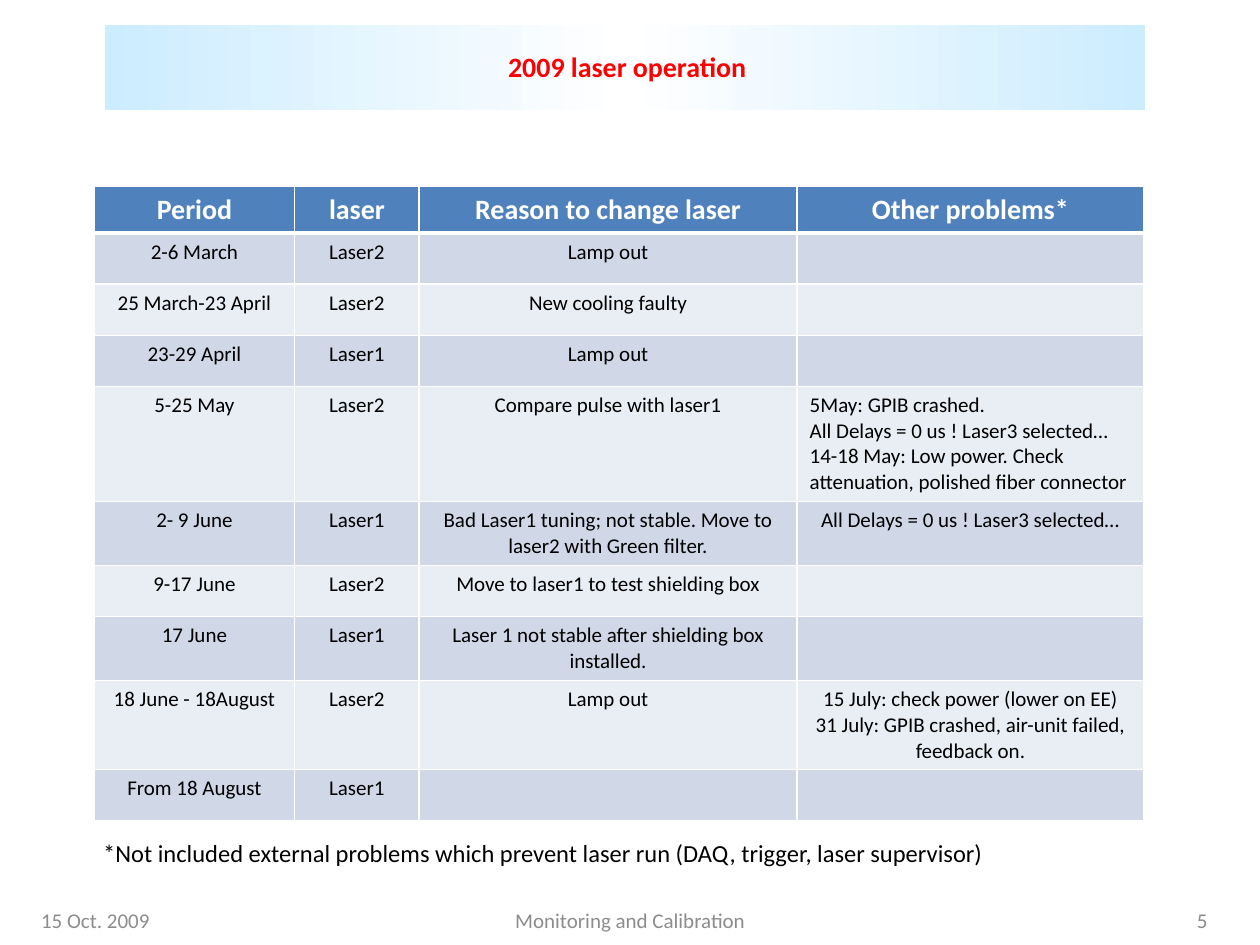
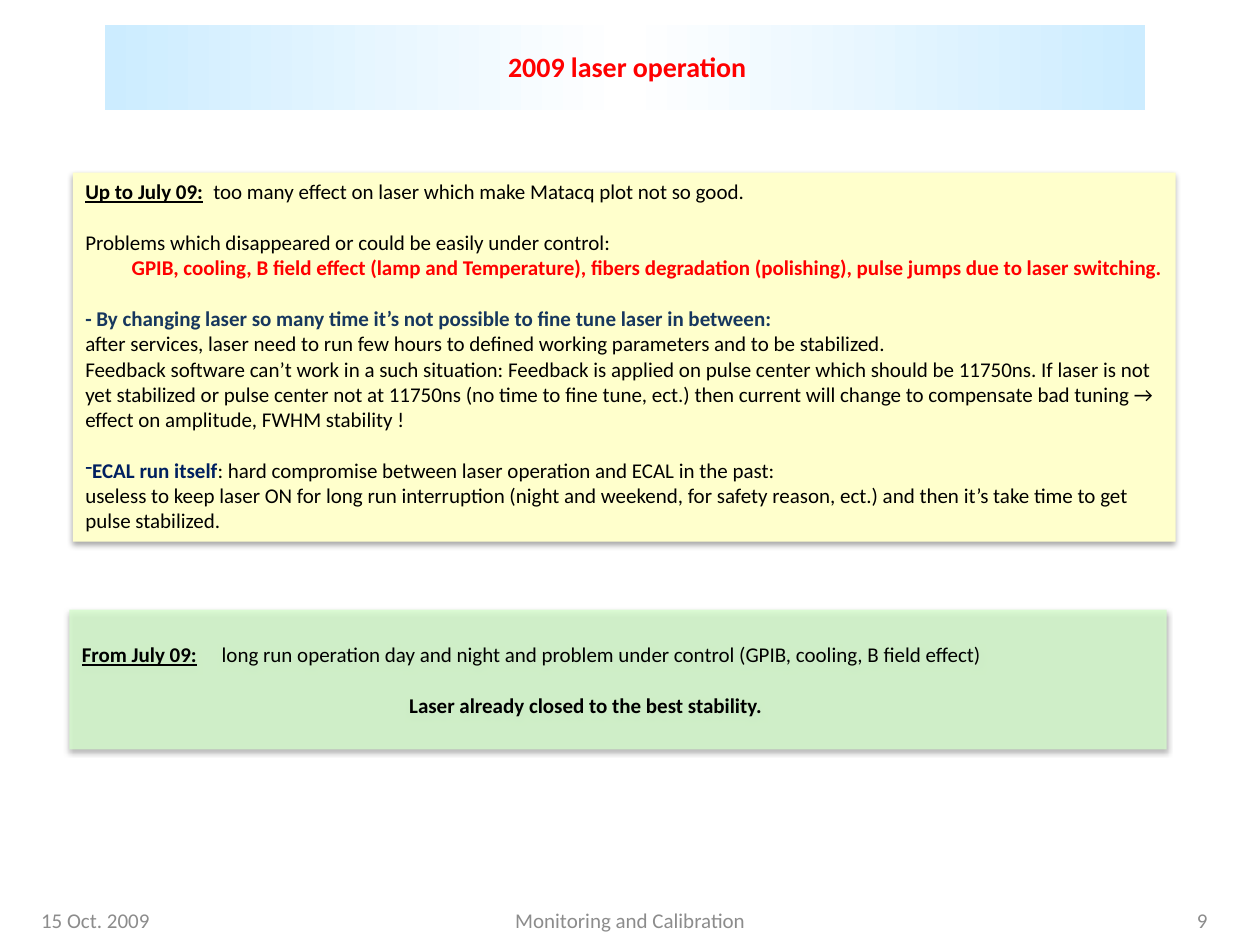
from copy import deepcopy
from dataclasses import dataclass, field
from typing import Any, Optional

from pptx import Presentation
from pptx.dml.color import RGBColor
from pptx.enum.shapes import MSO_SHAPE
from pptx.enum.text import MSO_ANCHOR, PP_ALIGN
from pptx.oxml import parse_xml
from pptx.oxml.ns import nsdecls, qn
from pptx.util import Cm, Pt


@dataclass(frozen=True)
class Theme:
    font: str = "Calibri"
    title_size: int = 16
    note_size: int = 14
    body_size: int = 12
    blank_line: float = 14.65
    black: str = "000000"
    white: str = "FFFFFF"
    red: str = "FF0000"
    grey: str = "8C8C8C"
    navy: str = "17375E"
    ink: str = "002060"
    band: str = "CCECFF"
    header: str = "4F81BD"
    stripes: tuple[str, str] = ("D0D8E8", "E9EDF4")
    yellow: str = "FFFFCC"
    green: str = "D5FCCC"


T = Theme()


@dataclass(frozen=True)
class Box:
    left: float
    top: float
    width: float
    height: float

    def emu(self) -> tuple:
        return Cm(self.left), Cm(self.top), Cm(self.width), Cm(self.height)


@dataclass(frozen=True)
class Run:
    text: str
    color: str = T.black
    size: int = T.body_size
    formats: dict = field(default_factory=dict)


@dataclass(frozen=True)
class Para:
    runs: tuple[Run, ...]
    align: PP_ALIGN = PP_ALIGN.LEFT
    gap: bool = False
    tab: float = 0
    indent: float = 0
    bullet: str = ""


@dataclass(frozen=True)
class Panel:
    box: Box
    fill: str
    paras: tuple[Para, ...]
    opacity: int = 100
    anchor: MSO_ANCHOR = MSO_ANCHOR.TOP


BOLD = {"bold": True}
LEAD = {"bold": True, "underline": True}

BAND = Box(2.12, 0.51, 20.96, 1.7)
TITLE = Box(6.78, 0.71, 11.86, 1.27)
NOTE = Box(1.83, 16.76, 18.42, 0.86)
FOOTER_TOP, FOOTER_HEIGHT = 18.03, 1.02

COLUMNS = (4.04, 2.51, 7.62, 6.99)
ROW_HEIGHTS = (0.94, 1.03, 1.03, 1.03, 2.32, 1.29, 1.03, 1.29, 1.79, 1.03)
TABLE = Box(1.9, 3.76, sum(COLUMNS), sum(ROW_HEIGHTS))
LASER_LOG = (
    ("Period", "laser", "Reason to change laser", "Other problems*"),
    ("2-6 March", "Laser2", "Lamp out", ""),
    ("25 March-23 April", "Laser2", "New cooling faulty", ""),
    ("23-29 April", "Laser1", "Lamp out", ""),
    ("5-25 May", "Laser2", "Compare pulse with laser1",
     "5May: GPIB crashed.\nAll Delays = 0 us ! Laser3 selected…\n"
     "14-18 May: Low power. Check attenuation, polished fiber connector"),
    ("2- 9 June", "Laser1",
     "Bad Laser1 tuning; not stable. Move to laser2 with Green filter.",
     "All Delays = 0 us ! Laser3 selected…"),
    ("9-17 June", "Laser2", "Move to laser1 to test shielding box", ""),
    ("17 June", "Laser1", "Laser 1 not stable after shielding box installed.", ""),
    ("18 June - 18August", "Laser2", "Lamp out",
     "15 July: check power (lower on EE)\n"
     "31 July: GPIB crashed, air-unit failed, feedback on."),
    ("From 18 August", "Laser1", "", ""),
)
LEFT_ALIGNED_CELL = (4, 3)

PANELS = (
    Panel(Box(1.47, 3.48, 22.23, 7.44), T.yellow, (
        Para((Run("Up to July 09:", formats=LEAD),
              Run("\ttoo many effect on laser which make Matacq plot not so good.")),
             tab=2.58),
        Para((Run("Problems which disappeared or could be easily under control:"),), gap=True),
        Para((Run("GPIB, cooling, B field effect (lamp and Temperature), fibers degradation "
                  "(polishing), pulse jumps due to laser switching.", T.red, formats=BOLD),),
             PP_ALIGN.RIGHT),
        Para((Run("- By changing laser so many time it’s not possible to fine tune laser "
                  "in between:", T.navy, formats=BOLD),), gap=True),
        Para((Run("after services, laser need to run few hours to defined working parameters "
                  "and to be stabilized."),)),
        Para((Run("Feedback software can’t work in a such situation: Feedback is applied on "
                  "pulse center which should be 11750ns. If laser is not yet stabilized or "
                  "pulse center not at 11750ns (no time to fine tune, ect.) then current will "
                  "change to compensate bad tuning → effect on amplitude, FWHM stability !"),)),
        Para((Run("ECAL run itself", T.ink, formats=BOLD),
              Run(": hard compromise between laser operation and ECAL in the past:")),
             gap=True, bullet="-"),
        Para((Run("useless to keep laser ON for long run interruption (night and weekend, for "
                  "safety reason, ect.) and then it’s take time to get pulse stabilized."),)),
    )),
    Panel(Box(1.4, 12.29, 22.12, 2.82), T.green, (
        Para((Run("From July 09:", formats=LEAD),
              Run("\tlong run operation day and night and problem under control "
                  "(GPIB, cooling, B field effect)")), tab=2.82),
        Para((Run("Laser already closed to the best stability.", formats=BOLD),),
             gap=True, indent=6.6),
    ), 80, MSO_ANCHOR.MIDDLE),
)


def rgb(color: str) -> RGBColor:
    return RGBColor.from_string(color)


def apply(target: Any, formats: dict) -> None:
    for name, value in formats.items():
        setattr(target, name, value)


def write(tf: Any, paras: tuple[Para, ...]) -> None:
    for i, para in enumerate(paras):
        p = tf.add_paragraph() if i else tf.paragraphs[0]
        pPr = p._p.get_or_add_pPr()
        if para.indent:
            pPr.set("marL", str(Cm(para.indent)))
        if para.bullet:
            pPr.append(parse_xml(f'<a:buChar {nsdecls("a")} char="{para.bullet}"/>'))
        if para.tab:
            pPr.append(parse_xml(f'<a:tabLst {nsdecls("a")}>'
                                 f'<a:tab pos="{Cm(para.tab)}" algn="l"/></a:tabLst>'))
        p.alignment = para.align
        if para.gap:
            p.space_before = Pt(T.blank_line)
        for run in para.runs:
            r = p.add_run()
            r.text = run.text
            apply(r.font, {"name": T.font, "size": Pt(run.size), "bold": False} | run.formats)
            r.font.color.rgb = rgb(run.color)


def add_shape(s: Any, kind: MSO_SHAPE, box: Box, fill: Optional[str] = None) -> Any:
    sp = s.shapes.add_shape(kind, *box.emu())
    sp.shadow.inherit = False
    sp.line.fill.background()
    if fill:
        sp.fill.solid()
        sp.fill.fore_color.rgb = rgb(fill)
    else:
        sp.fill.background()
    return sp


def add_text(s: Any, box: Box, run: Run, align: PP_ALIGN = PP_ALIGN.LEFT,
             anchor: MSO_ANCHOR = MSO_ANCHOR.MIDDLE, wrap: bool = True) -> None:
    tf = s.shapes.add_textbox(*box.emu()).text_frame
    apply(tf, {"word_wrap": wrap, "vertical_anchor": anchor})
    write(tf, (Para((run,), align),))


def add_band(s: Any) -> None:
    sp = add_shape(s, MSO_SHAPE.RECTANGLE, BAND)
    sp.fill.gradient()
    sp.fill.gradient_angle = 0
    stops = sp._element.spPr.find(".//" + qn("a:gsLst"))
    stops.append(deepcopy(stops[0]))
    for stop, position, color in zip(sp.fill.gradient_stops, (0, 0.5, 1),
                                     (T.band, T.white, T.band)):
        stop.position = position
        stop.color.rgb = rgb(color)


def add_title(s: Any) -> None:
    tf = add_shape(s, MSO_SHAPE.ROUNDED_RECTANGLE, TITLE).text_frame
    apply(tf, {"word_wrap": True, "vertical_anchor": MSO_ANCHOR.MIDDLE})
    title = Run("2009 laser operation ", T.red, T.title_size, BOLD)
    write(tf, (Para((title,), PP_ALIGN.CENTER),))


def add_footers(s: Any, number: int) -> None:
    for text, left, width, align in (
        ("15 Oct. 2009", 0.58, 5.92, PP_ALIGN.LEFT),
        ("Monitoring and Calibration", 8.68, 8.05, PP_ALIGN.CENTER),
        (str(number), 18.67, 5.92, PP_ALIGN.RIGHT),
    ):
        add_text(s, Box(left, FOOTER_TOP, width, FOOTER_HEIGHT), Run(text, T.grey), align)


def add_slide(prs: Any, number: int) -> Any:
    s = prs.slides.add_slide(prs.slide_layouts[6])
    add_band(s)
    add_title(s)
    add_footers(s, number)
    return s


def add_borders(cell: Any, bottom: int) -> None:
    tcPr = cell._tc.get_or_add_tcPr()
    for side, width in {"L": 1, "R": 1, "T": 1, "B": bottom}.items():
        tcPr.append(parse_xml(
            f'<a:ln{side} {nsdecls("a")} w="{Pt(width)}"><a:solidFill>'
            f'<a:srgbClr val="{T.white}"/></a:solidFill></a:ln{side}>'))


def add_laser_table(s: Any) -> None:
    table = s.shapes.add_table(len(LASER_LOG), len(COLUMNS), *TABLE.emu()).table
    for column, width in zip(table.columns, COLUMNS):
        column.width = Cm(width)
    for i, (texts, height) in enumerate(zip(LASER_LOG, ROW_HEIGHTS)):
        table.rows[i].height = Cm(height)
        is_header = i == 0
        look = (T.white, T.title_size, BOLD) if is_header else (T.black, T.body_size, {})
        for j, text in enumerate(texts):
            cell = table.cell(i, j)
            add_borders(cell, 3 if is_header else 1)
            cell.fill.solid()
            cell.fill.fore_color.rgb = rgb(T.header if is_header else T.stripes[(i - 1) % 2])
            align = PP_ALIGN.LEFT if (i, j) == LEFT_ALIGNED_CELL else PP_ALIGN.CENTER
            if text:
                write(cell.text_frame,
                      tuple(Para((Run(line, *look),), align) for line in text.split("\n")))


def add_panel(s: Any, panel: Panel) -> None:
    sp = add_shape(s, MSO_SHAPE.RECTANGLE, panel.box, panel.fill)
    spPr = sp._element.spPr
    if panel.opacity < 100:
        color = spPr.find(qn("a:solidFill"))[0]
        color.append(parse_xml(f'<a:alpha {nsdecls("a")} val="{panel.opacity * 1000}"/>'))
    spPr.find(qn("a:effectLst")).append(parse_xml(
        f'<a:outerShdw {nsdecls("a")} blurRad="{Pt(3.1)}" dist="{Pt(1.8)}" dir="5400000" '
        f'rotWithShape="0"><a:srgbClr val="{T.black}"><a:alpha val="35000"/></a:srgbClr>'
        '</a:outerShdw>'))
    apply(sp.text_frame, {"word_wrap": True, "vertical_anchor": panel.anchor})
    write(sp.text_frame, panel.paras)


def main() -> None:
    prs = Presentation()
    apply(prs, {"slide_width": Cm(25.4), "slide_height": Cm(19.05)})

    s = add_slide(prs, 5)
    add_laser_table(s)
    note = Run("*Not included external problems which prevent laser run "
               "(DAQ, trigger, laser supervisor)", size=T.note_size)
    add_text(s, NOTE, note, anchor=MSO_ANCHOR.TOP, wrap=False)

    s = add_slide(prs, 9)
    for panel in PANELS:
        add_panel(s, panel)

    prs.save("out.pptx")


if __name__ == "__main__":
    main()
